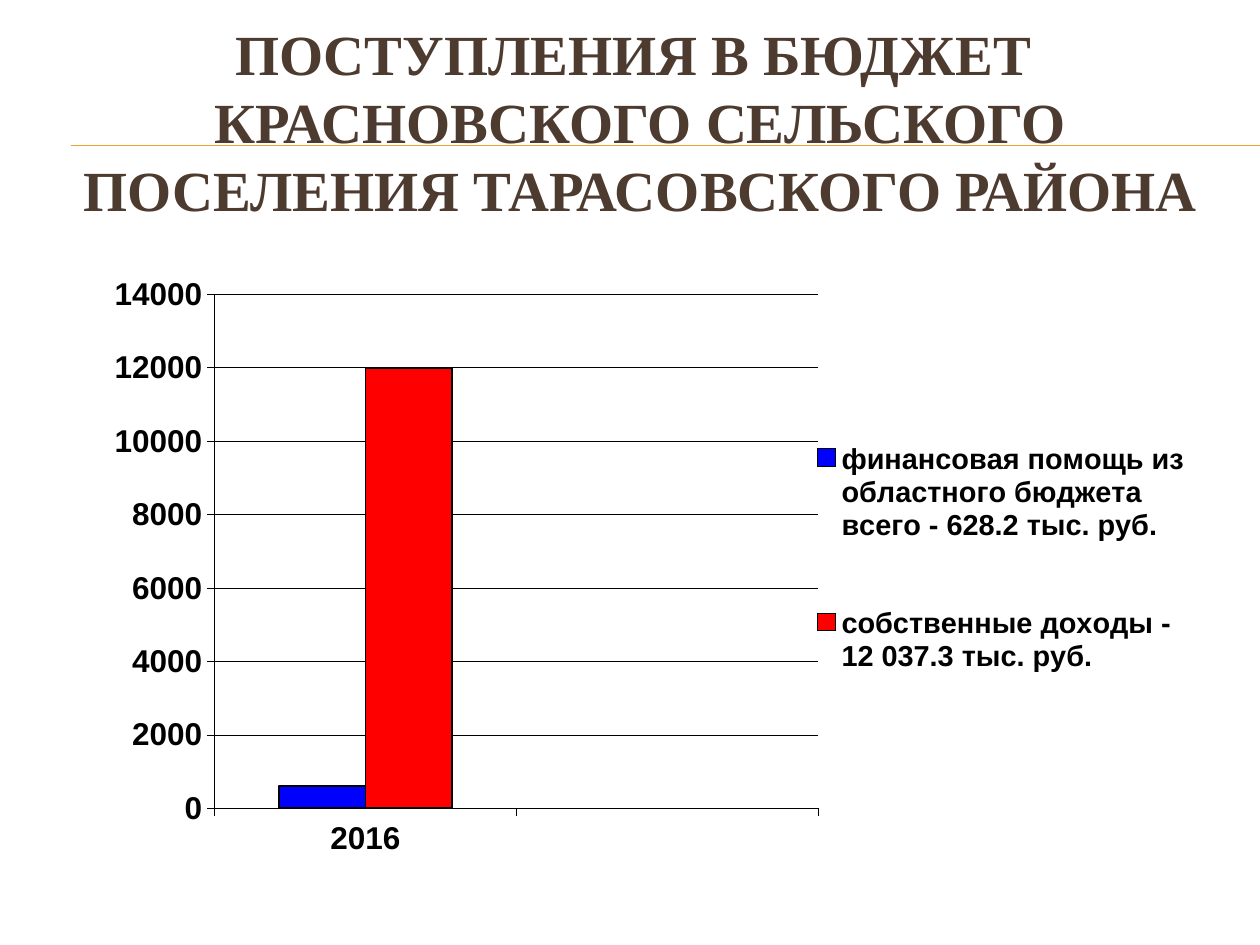
from lxml import etree
from pptx import Presentation
from pptx.chart.data import CategoryChartData as ChartData
from pptx.dml.color import RGBColor
from pptx.enum.chart import XL_CHART_TYPE as ChartType
from pptx.enum.chart import XL_LEGEND_POSITION as LegendPosition
from pptx.enum.chart import XL_TICK_LABEL_POSITION as LabelPosition
from pptx.enum.chart import XL_TICK_MARK as TickMark
from pptx.enum.text import MSO_ANCHOR as Anchor
from pptx.enum.text import PP_ALIGN as Align
from pptx.oxml import parse_xml
from pptx.oxml.ns import nsdecls, qn
from pptx.util import Pt


def color(value):
    return RGBColor.from_string(value)


def apply(target, formats):
    for name, value in formats.items():
        setattr(target, name, value)


class SlideBuilder:
    title_font = {"name": "Times New Roman", "size": Pt(32.4), "bold": True}
    chart_font = {"name": "Arial", "size": Pt(18), "bold": True}
    legend_font = {"name": "Arial", "size": Pt(16.5), "bold": True}
    title_color, ink, accent = "4E3B30", "000000", "F0A22E"

    def __init__(self, deck):
        self.page = deck.slides.add_slide(deck.slide_layouts[6])

    def set_font(self, font, formats, value):
        apply(font, formats)
        font.color.rgb = color(value)

    def set_line(self, line, value, width):
        line.color.rgb = color(value)
        line.width = Pt(width)

    def rule(self, left, right, top):
        rule = self.page.shapes.add_connector(1, Pt(left), Pt(top), Pt(right), Pt(top))
        self.set_line(rule.line, self.accent, 0.75)
        etree.SubElement(rule._element.spPr, qn("a:effectLst"))

    def title(self, text, *bounds):
        box = self.page.shapes.add_textbox(*map(Pt, bounds))
        apply(box.text_frame, {"word_wrap": True, "vertical_anchor": Anchor.MIDDLE})
        para = box.text_frame.paragraphs[0]
        para.text = text
        apply(para, {"alignment": Align.CENTER, "line_spacing": Pt(38.8)})
        for span in para.runs:
            self.set_font(span.font, self.title_font, self.title_color)

    def place(self, parent, x, y, w, h, inner=False):
        """Give a plot area or legend a fixed place, in fractions of the chart."""
        for old in parent.findall(qn("c:layout")):
            parent.remove(old)
        target = '<c:layoutTarget val="inner"/>' if inner else ""
        layout = parse_xml(
            f'<c:layout {nsdecls("c")}><c:manualLayout>{target}'
            '<c:xMode val="edge"/><c:yMode val="edge"/>'
            f'<c:x val="{x}"/><c:y val="{y}"/><c:w val="{w}"/><c:h val="{h}"/>'
            "</c:manualLayout></c:layout>")
        if inner:
            parent.insert(0, layout)
        else:
            parent.find(qn("c:legendPos")).addnext(layout)

    def axis(self, axis, formats):
        apply(axis, {"major_tick_mark": TickMark.OUTSIDE,
                     "minor_tick_mark": TickMark.NONE, **formats})
        self.set_font(axis.tick_labels.font, self.chart_font, self.ink)
        self.set_line(axis.format.line, self.ink, 0.25)

    def column_chart(self, categories, series, *bounds):
        data = ChartData()
        data.categories = categories
        for name, values, _ in series:
            data.add_series(name, values)
        chart = self.page.shapes.add_chart(
            ChartType.COLUMN_CLUSTERED, *map(Pt, bounds), data).chart
        chart.has_title = False
        self.set_font(chart.font, self.chart_font, self.ink)

        # Columns
        plot = chart.plots[0]
        apply(plot, {"gap_width": 150, "overlap": 0, "vary_by_categories": False})
        for column, (_, _, fill) in zip(plot.series, series):
            column.invert_if_negative = False
            column.format.fill.solid()
            column.format.fill.fore_color.rgb = color(fill)
            self.set_line(column.format.line, self.ink, 1)

        # Axes
        self.axis(chart.category_axis, {"tick_label_position": LabelPosition.LOW})
        self.axis(chart.value_axis, {"minimum_scale": 0, "maximum_scale": 14000,
                                     "major_unit": 2000, "has_major_gridlines": True})
        self.set_line(chart.value_axis.major_gridlines.format.line, self.ink, 0.25)

        # Legend and layout
        chart.has_legend = True
        apply(chart.legend, {"position": LegendPosition.RIGHT, "include_in_layout": False})
        self.set_font(chart.legend.font, self.legend_font, self.ink)
        self.place(chart._chartSpace.chart.plotArea, 0.12, 0.03, 0.54, 0.843, inner=True)
        self.place(chart.legend._element, 0.658, 0.166, 0.34, 0.594)


def main():
    deck = Presentation()
    apply(deck, {"slide_width": Pt(720), "slide_height": Pt(540)})
    slide = SlideBuilder(deck)

    # Double rule behind the title
    for top in (83, 83.2):
        slide.rule(40.5, 720, top)

    slide.title("ПОСТУПЛЕНИЯ В БЮДЖЕТ \vКРАСНОВСКОГО СЕЛЬСКОГО ПОСЕЛЕНИЯ ТАРАСОВСКОГО РАЙОНА",
                24, 36, 684, 66)

    # Budget income by source
    income = [
        ("финансовая помощь из областного бюджета всего - 628.2 тыс. руб.",
         (600, None), "0000FF"),
        ("собственные доходы - 12 037.3 тыс. руб.", (12000, None), "FF0000"),
    ]
    slide.column_chart(["2016", ""], income, 46, 157.7, 638.6, 348.5)

    deck.save("out.pptx")


if __name__ == "__main__":
    main()
